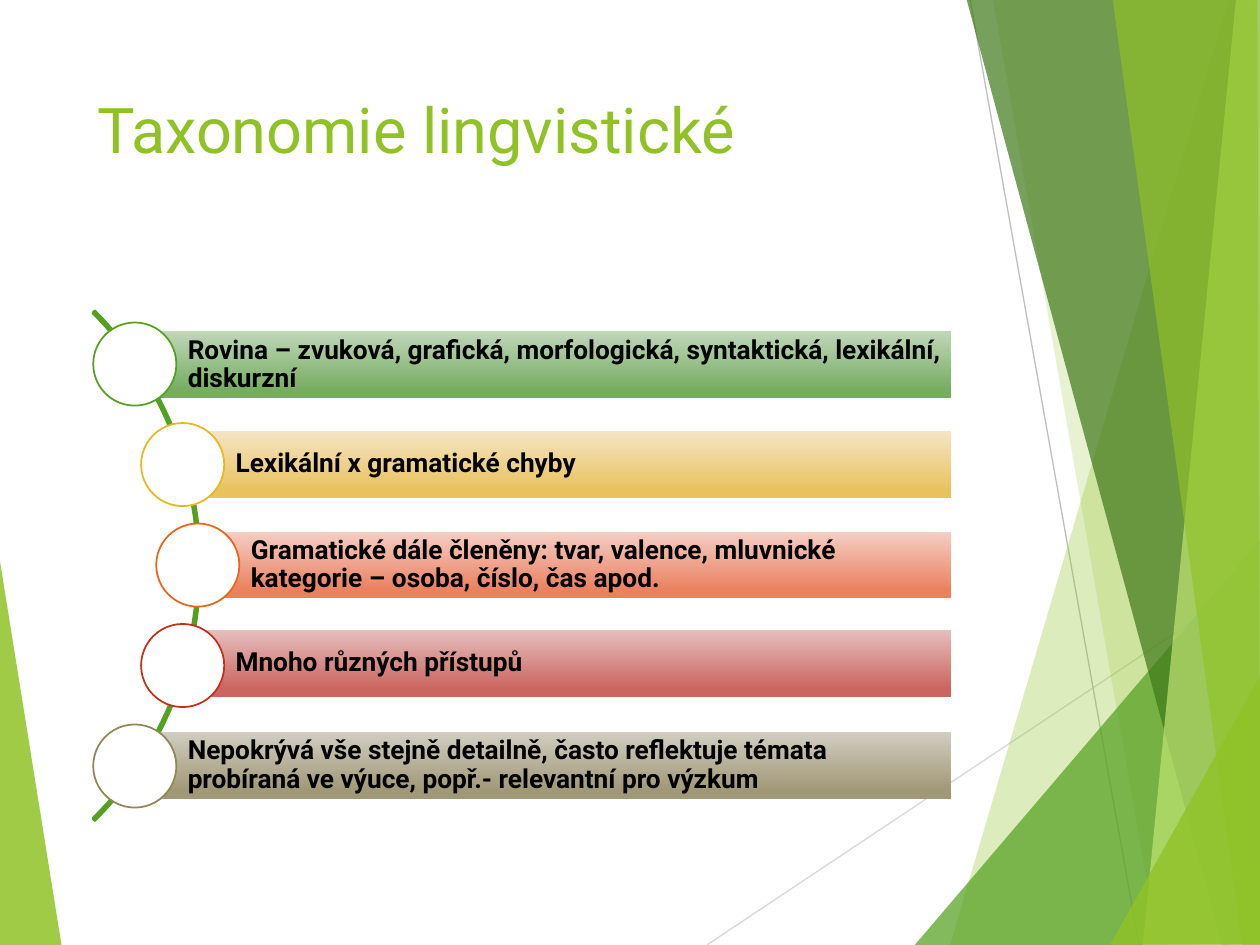
"""Build the slide on linguistic taxonomies with its list along an arc."""
from dataclasses import dataclass

from lxml import etree
from pptx import Presentation
from pptx.dml.color import RGBColor
from pptx.enum.shapes import MSO_CONNECTOR, MSO_SHAPE
from pptx.enum.text import MSO_ANCHOR, MSO_AUTO_SIZE, PP_ALIGN
from pptx.oxml.ns import qn
from pptx.util import Inches, Pt

STRAIGHT = MSO_CONNECTOR.STRAIGHT
RECTANGLE, OVAL, ARC = MSO_SHAPE.RECTANGLE, MSO_SHAPE.OVAL, MSO_SHAPE.BLOCK_ARC
TOP, MIDDLE = MSO_ANCHOR.TOP, MSO_ANCHOR.MIDDLE
LEFT = PP_ALIGN.LEFT
NO_AUTOFIT = MSO_AUTO_SIZE.NONE


@dataclass(frozen=True)
class Theme:
    """Colours, font and type sizes."""
    font: str = "Roboto"
    title_size: float = 36
    item_size: float = 15
    lime: str = "90C226"
    green: str = "54A021"
    dark_green: str = "3F7819"
    pale_lime: str = "C0E474"
    text: str = "000000"
    white: str = "FFFFFF"
    light_gray: str = "D9D9D9"
    gray: str = "BFBFBF"


@dataclass(frozen=True)
class Ray:
    """A straight hairline of the backdrop."""
    start: tuple[float, float]
    end: tuple[float, float]
    color: str


@dataclass(frozen=True)
class Facet:
    """A translucent polygon of the backdrop."""
    points: tuple[tuple[float, float], ...]
    color: str
    opacity: int


@dataclass(frozen=True)
class Item:
    """A bar with its circle."""
    text: str
    left: float
    top: float
    light: str
    dark: str
    ring: str


THEME = Theme()
BAR_RIGHT, BAR_HEIGHT = 7.55, 0.53
CIRCLE_SIZE, CIRCLE_OFFSET = 0.66, 0.33
FIRST_CIRCLE_TOP, LAST_CIRCLE_TOP = 2.56, 5.75

LEFT_FACET = Facet(((-0.01, 4.39), (0.49, 7.51), (-0.01, 7.5)), THEME.lime, 85)
RAYS = (
    Ray((5.61, 7.5), (10.01, 4.57), THEME.light_gray),
    Ray((7.7, 0), (9.04, 7.5), THEME.gray),
)
RIGHT_FACETS = (
    Facet(((9.75, 0), (7.54, 7.5), (10.02, 7.51), (10.01, 0.01)), THEME.lime, 30),
    Facet(((7.88, -0.01), (9.19, 7.5), (10.01, 7.5), (10.01, -0.01)), THEME.lime, 20),
    Facet(((7.26, 7.5), (10, 4.29), (10.01, 7.5)), THEME.green, 72),
    Facet(((7.67, -0.01), (9.7, 7.5), (10.01, 7.49), (10.01, -0.01)), THEME.dark_green, 70),
    Facet(((9.81, -0.01), (9.07, 7.5), (10.01, 7.5), (10, -0.01)), THEME.pale_lime, 70),
    Facet(((8.83, -0.01), (9.86, 7.5), (10, 7.5), (9.98, -0.01)), THEME.lime, 65),
    Facet(((8.81, 7.5), (10.01, 5.35), (10.01, 7.49)), THEME.lime, 80),
)
ITEMS = (
    Item("Rovina – zvuková, grafická, morfologická, syntaktická, lexikální, diskurzní",
         1.07, 2.63, "C0D6B9", "76AD61", THEME.green),
    Item("Lexikální x gramatické chyby",
         1.45, 3.42, "F5E5C5", "E9C260", "E6B91E"),
    Item("Gramatické dále členěny: tvar, valence, mluvnické kategorie – osoba, číslo, čas apod.",
         1.57, 4.22, "F5CEC5", "EA815F", "E76618"),
    Item("Mnoho různých přístupů",
         1.45, 5, "E6BFBE", "CB6560", "C42F1A"),
    Item("Nepokrývá vše stejně detailně, často reflektuje témata probíraná ve výuce, "
         "popř.- relevantní pro výzkum",
         1.07, 5.81, "D1CDC0", "A19877", "918655"),
)


def rgb(color: str) -> RGBColor:
    """Turn a hex string into a colour."""
    return RGBColor.from_string(color)


def write_text(frame, text: str, *, size: float, color: str, bold: bool = False,
               anchor=TOP, insets: tuple = (0.1, 0.05, 0.1, 0.05),
               line_spacing: float = 1.0) -> None:
    """Fill a text frame with one formatted paragraph."""
    frame.word_wrap = True
    frame.auto_size = NO_AUTOFIT
    frame.vertical_anchor = anchor
    (frame.margin_left, frame.margin_top,
     frame.margin_right, frame.margin_bottom) = map(Inches, insets)
    para = frame.paragraphs[0]
    para.alignment = LEFT
    para.line_spacing = line_spacing
    span = para.add_run()
    span.text = text
    span.font.name = THEME.font
    span.font.size = Pt(size)
    span.font.bold = bold
    span.font.color.rgb = rgb(color)


def add_preset(page, kind, left: float, top: float, width: float, height: float):
    """Add a preset shape without a shadow."""
    shape = page.shapes.add_shape(kind, *map(Inches, (left, top, width, height)))
    shape.shadow.inherit = False
    return shape


def outline(shape, color: str, width: float) -> None:
    """Give a shape or connector a coloured line."""
    shape.line.color.rgb = rgb(color)
    shape.line.width = Pt(width)


def draw_ray(page, ray: Ray) -> None:
    """Draw a hairline."""
    line = page.shapes.add_connector(STRAIGHT, *map(Inches, ray.start + ray.end))
    outline(line, ray.color, 0.75)
    etree.SubElement(line._element.spPr, qn("a:effectLst"))


def draw_facet(page, facet: Facet) -> None:
    """Draw a translucent polygon."""
    points = [(Inches(x), Inches(y)) for x, y in facet.points]
    builder = page.shapes.build_freeform(*points[0])
    builder.add_line_segments(points[1:], close=True)
    shape = builder.convert_to_shape()
    shape.shadow.inherit = False
    shape.line.fill.background()
    shape.fill.solid()
    shape.fill.fore_color.rgb = rgb(facet.color)
    color = shape._element.spPr.find(qn("a:solidFill")).find(qn("a:srgbClr"))
    etree.SubElement(color, qn("a:alpha"), val=str(facet.opacity * 1000))


def draw_arc(page) -> None:
    """Draw the arc that links the circles."""
    arc = add_preset(page, ARC, -4.13, 1.63, 5.72, 5.72)
    for index, value in enumerate((189, 27, 0.004)):
        arc.adjustments[index] = value
    arc.fill.background()
    outline(arc, THEME.green, 1.5)


def draw_item(page, item: Item, circle_top: float) -> None:
    """Draw a gradient bar with its text and circle."""
    bar = add_preset(page, RECTANGLE, item.left, item.top, BAR_RIGHT - item.left, BAR_HEIGHT)
    bar.line.fill.background()
    bar.fill.gradient()
    bar.fill.gradient_angle = 270
    stops = ((0, item.light), (0.88, item.dark))
    for stop, (position, color) in zip(bar.fill.gradient_stops, stops):
        stop.position = position
        stop.color.rgb = rgb(color)
    write_text(bar.text_frame, item.text, size=THEME.item_size, color=THEME.text, bold=True,
               anchor=MIDDLE, insets=(0.42, 0.04, 0.04, 0.04), line_spacing=0.9)
    circle = add_preset(page, OVAL, item.left - CIRCLE_OFFSET, circle_top,
                        CIRCLE_SIZE, CIRCLE_SIZE)
    circle.fill.solid()
    circle.fill.fore_color.rgb = rgb(THEME.white)
    outline(circle, item.ring, 1)


def main() -> None:
    """Build and save the deck."""
    deck = Presentation()
    deck.slide_width, deck.slide_height = Inches(10), Inches(7.5)
    page = deck.slides.add_slide(deck.slide_layouts[5])
    title = page.shapes.title
    title.left, title.top, title.width, title.height = map(Inches, (0.67, 0.67, 6.94, 1.44))
    write_text(title.text_frame, "Taxonomie lingvistické",
               size=THEME.title_size, color=THEME.lime)
    draw_facet(page, LEFT_FACET)
    for ray in RAYS:
        draw_ray(page, ray)
    for facet in RIGHT_FACETS:
        draw_facet(page, facet)
    draw_arc(page)
    pitch = (LAST_CIRCLE_TOP - FIRST_CIRCLE_TOP) / (len(ITEMS) - 1)
    for index, item in enumerate(ITEMS):
        draw_item(page, item, FIRST_CIRCLE_TOP + index * pitch)
    deck.save("out.pptx")


if __name__ == "__main__":
    main()
